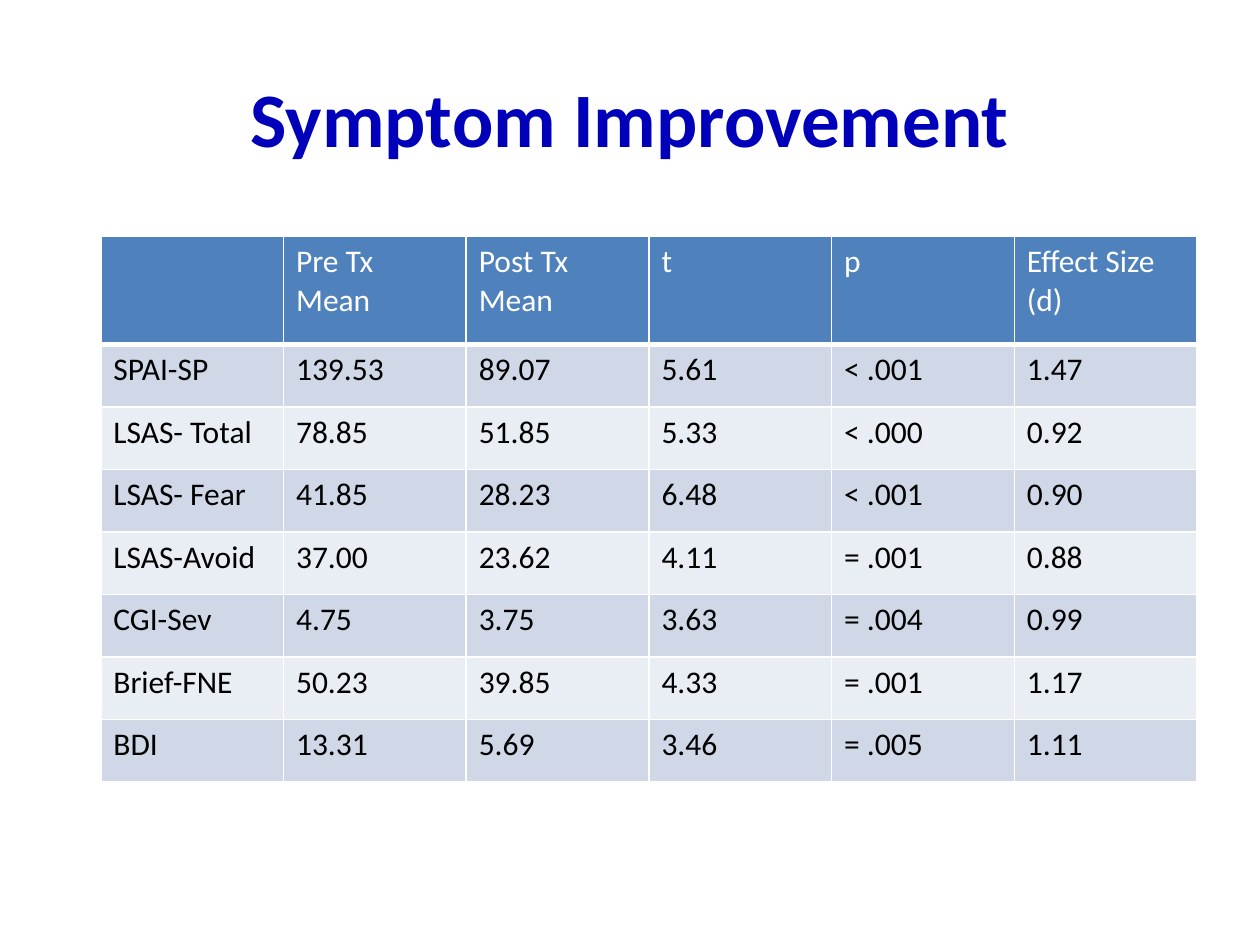
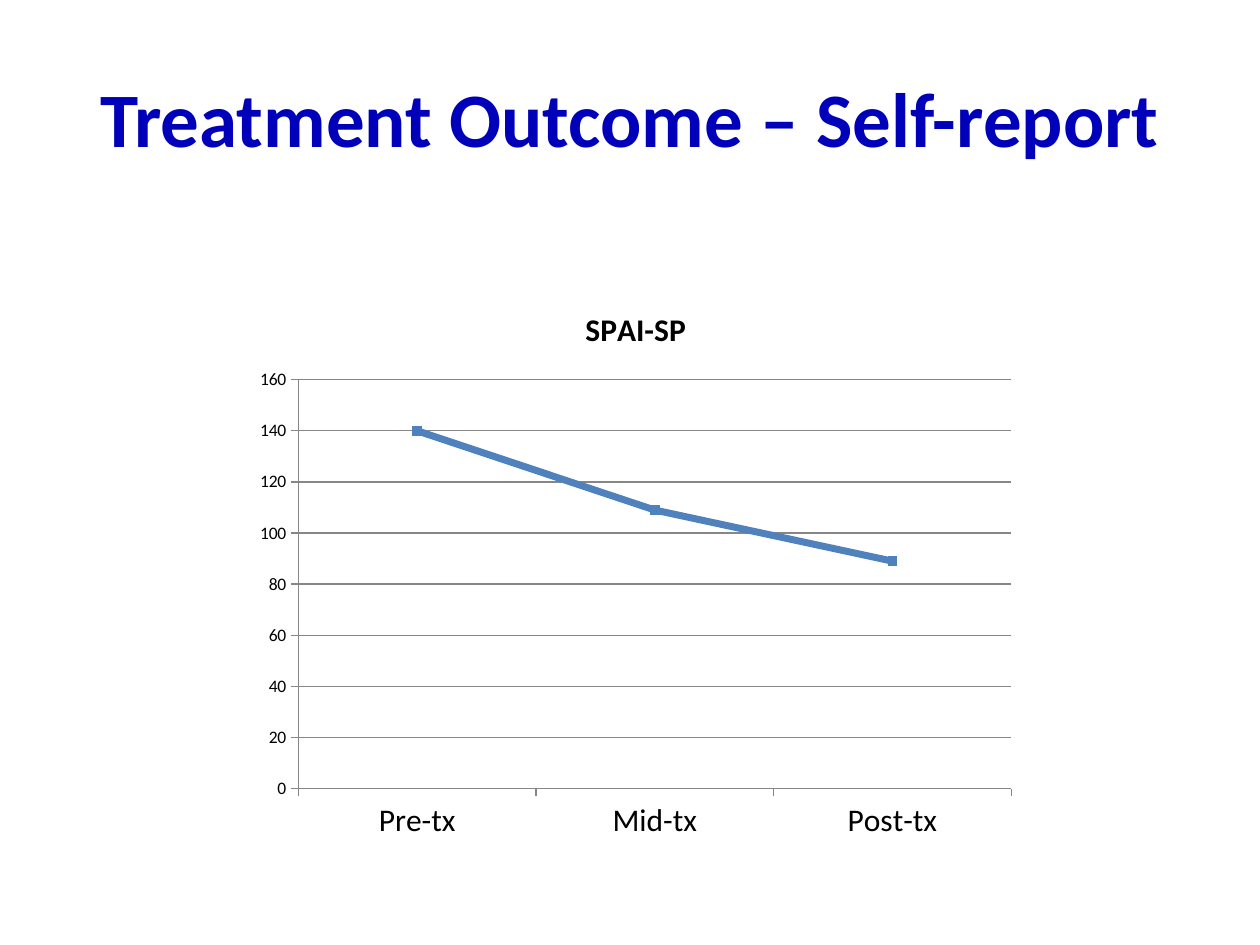
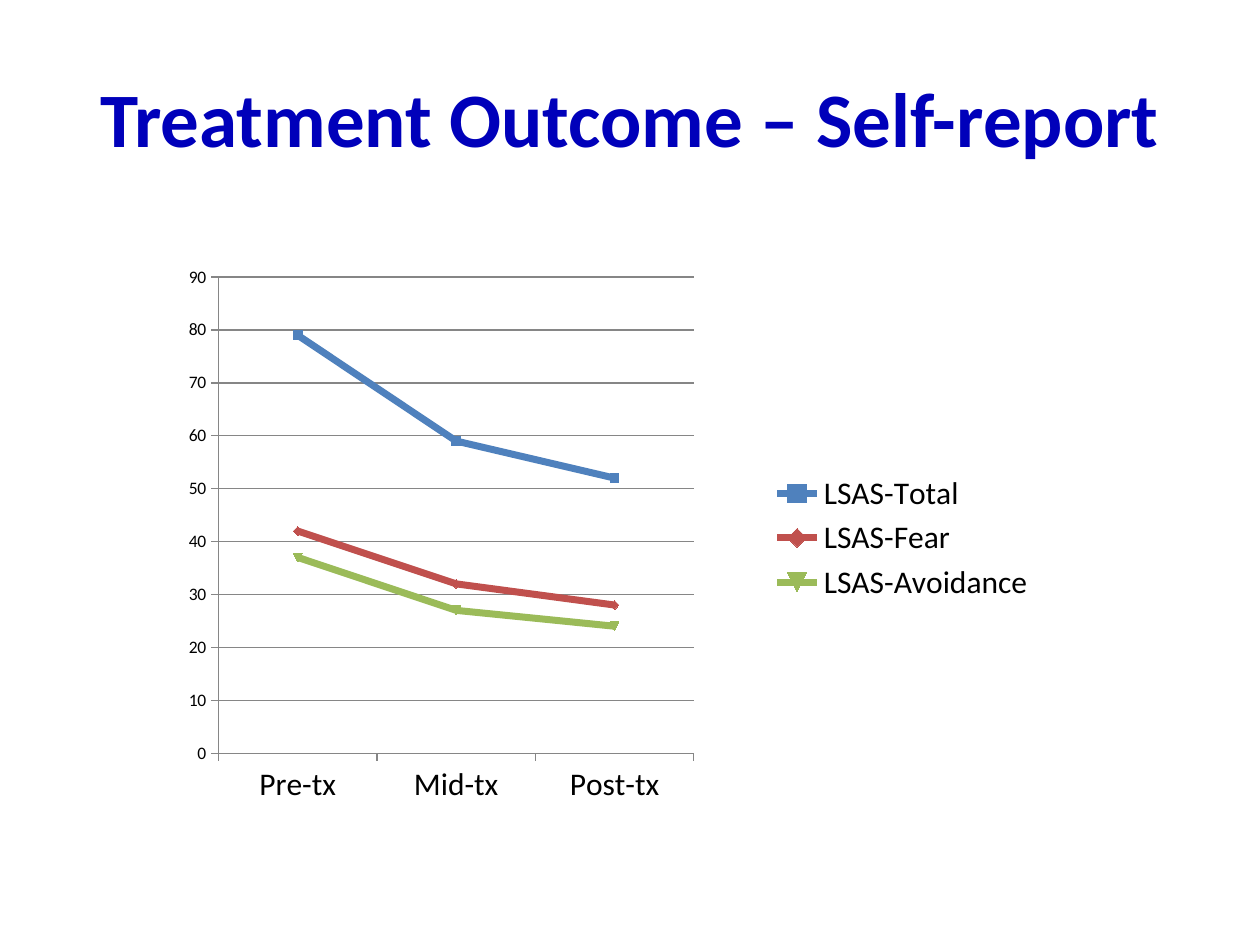
from lxml import etree
from pptx import Presentation
from pptx.chart.data import CategoryChartData
from pptx.dml.color import RGBColor
from pptx.enum import chart as ch, text
from pptx.oxml import ns
from pptx.util import Pt

FONT = "Calibri"
COLORS = {
    "title": "0000BA", "header": "4F81BD", "band_dark": "D0D8E8",
    "band_light": "E9EDF4", "white": "FFFFFF", "black": "000000",
    "axis": "868686", "blue": "4F81BD", "red": "C0504D", "green": "9BBB59",
}


def rgb(name):
    return RGBColor.from_string(COLORS[name])


def write(tf, content, size=18, color="black", bold=False, align=None):
    p = tf.paragraphs[0]
    p.alignment = align
    r = p.add_run()
    r.text = content
    r.font.name = FONT
    r.font.size = Pt(size)
    r.font.bold = bold
    r.font.color.rgb = rgb(color)


prs = Presentation()
prs.slide_width, prs.slide_height = Pt(720), Pt(540)

slides = []
for title in ["Symptom Improvement"] + ["Treatment Outcome – Self-report"] * 2:
    s = prs.slides.add_slide(prs.slide_layouts[5])
    sp = s.shapes.title
    sp.left, sp.top, sp.width, sp.height = Pt(36), Pt(21.6), Pt(648), Pt(90)
    tf = sp.text_frame
    tf.word_wrap = True
    tf.vertical_anchor = text.MSO_ANCHOR.MIDDLE
    write(tf, title, size=44, color="title", bold=True, align=text.PP_ALIGN.CENTER)
    slides.append(s)

rows = [
    ["", "Pre Tx Mean", "Post Tx Mean", "t", "p", "Effect Size (d)"],
    ["SPAI-SP", "139.53", "89.07", "5.61", "< .001", "1.47"],
    ["LSAS- Total", "78.85", "51.85", "5.33", "< .000", "0.92"],
    ["LSAS- Fear", "41.85", "28.23", "6.48", "< .001", "0.90"],
    ["LSAS-Avoid", "37.00", "23.62", "4.11", "= .001", "0.88"],
    ["CGI-Sev", "4.75", "3.75", "3.63", "= .004", "0.99"],
    ["Brief-FNE", "50.23", "39.85", "4.33", "= .001", "1.17"],
    ["BDI", "13.31", "5.69", "3.46", "= .005", "1.11"],
]
table = slides[0].shapes.add_table(
    len(rows), len(rows[0]), Pt(57.6), Pt(135.2), Pt(626.4), Pt(311.9)).table
for column in table.columns:
    column.width = Pt(104.4)
for i, row in enumerate(rows):
    table.rows[i].height = Pt(35.7 if i else 61.7)
    fill = ("band_dark" if i % 2 else "band_light") if i else "header"
    for j, value in enumerate(row):
        cell = table.cell(i, j)
        tcPr = cell._tc.get_or_add_tcPr()
        for side in "LRTB":
            width = Pt(3 if i == 0 and side == "B" else 1)
            ln = etree.SubElement(tcPr, ns.qn(f"a:ln{side}"), w=str(width))
            line_fill = etree.SubElement(ln, ns.qn("a:solidFill"))
            etree.SubElement(line_fill, ns.qn("a:srgbClr"), val=COLORS["white"])
        cell.fill.solid()
        cell.fill.fore_color.rgb = rgb(fill)
        if value:
            write(cell.text_frame, value, color="black" if i else "white")

spai = [("SPAI-SP", [140, 109, 89], "blue")]
lsas = [
    ("LSAS-Total", [79, 59, 52], "blue"),
    ("LSAS-Fear", [42, 32, 28], "red"),
    ("LSAS-Avoidance", [37, 27, 24], "green"),
]
charts = []
for s, series, box in [
    (slides[1], spai, (139.7, 162, 447.1, 324)),
    (slides[2], lsas, (105.1, 145.4, 493.9, 324)),
]:
    data = CategoryChartData()
    data.categories = ["Pre-tx", "Mid-tx", "Post-tx"]
    for name, values, _ in series:
        data.add_series(name, values)
    chart = s.shapes.add_chart(
        ch.XL_CHART_TYPE.LINE_MARKERS, *[Pt(v) for v in box], data).chart
    chart.font.name = FONT
    chart.font.size = Pt(10)
    chart.font.color.rgb = rgb("black")
    chart.has_title = chart.has_legend = False
    chart.plots[0].vary_by_categories = False
    chart.category_axis.tick_labels.font.size = Pt(18)
    chart.value_axis.has_major_gridlines = True
    for axis in (chart.category_axis, chart.value_axis):
        axis.major_tick_mark = ch.XL_TICK_MARK.OUTSIDE
    for part in (chart.category_axis, chart.value_axis, chart.value_axis.major_gridlines):
        part.format.line.color.rgb = rgb("axis")
        part.format.line.width = Pt(0.75)
    for line, (_, _, color) in zip(chart.plots[0].series, series):
        line.smooth = False
        line.format.line.color.rgb = rgb(color)
        line.format.line.width = Pt(4)
        line.marker.size = 5
        line.marker.format.fill.solid()
        line.marker.format.fill.fore_color.rgb = rgb(color)
        line.marker.format.line.color.rgb = rgb(color)
    charts.append(chart)

charts[0].has_title = True
write(charts[0].chart_title.text_frame, "SPAI-SP", bold=True)
charts[0].chart_title.include_in_layout = False

charts[1].has_legend = True
legend = charts[1].legend
legend.position = ch.XL_LEGEND_POSITION.RIGHT
legend.include_in_layout = False
legend.font.size = Pt(18)

plot_area = charts[1].plots[0]._element.getparent()
for old in plot_area.findall(ns.qn("c:layout")):
    plot_area.remove(old)
layout = etree.Element(ns.qn("c:layout"))
manual = etree.SubElement(layout, ns.qn("c:manualLayout"))
for tag, value in [
    ("layoutTarget", "inner"), ("xMode", "edge"), ("yMode", "edge"),
    ("x", "0.04"), ("y", "0.04"), ("w", "0.55"), ("h", "0.84"),
]:
    etree.SubElement(manual, ns.qn(f"c:{tag}"), val=value)
plot_area.insert(0, layout)

prs.save("out.pptx")
